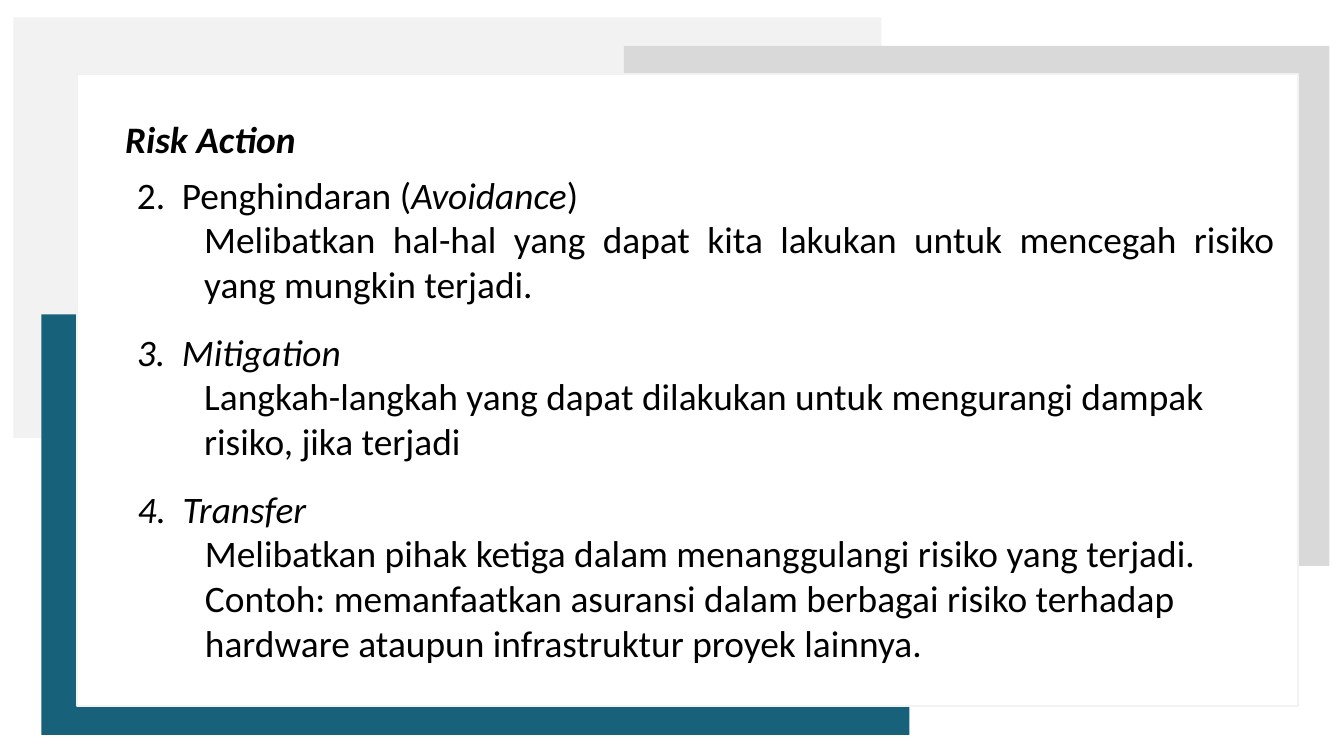
from lxml import etree
from pptx import Presentation
from pptx.dml.color import RGBColor
from pptx.enum import shapes, text
from pptx.oxml.ns import qn
from pptx.util import Pt

HUES = {"pale": "F2F2F2", "gray": "D9D9D9", "teal": "17617B",
        "white": "FFFFFF", "ink": "000000"}
PANELS = [
    ("pale", None, (7.2, 9.3, 465, 225.3)),
    ("gray", None, (334.2, 24.6, 378, 278.6)),
    ("teal", None, (22.2, 168.4, 465, 225.3)),
    ("white", "pale", (41.2, 39.8, 654.3, 338.4)),
]
TITLE = "Risk Action"
FIRST = 2
ACTIONS = [
    ([("Penghindaran (", False), ("Avoidance", True), (")", False)],
     "Melibatkan hal-hal yang dapat kita lakukan untuk mencegah risiko "
     "yang mungkin terjadi.",
     "JUSTIFY", (66.2, 88.4, 624.2, 80)),
    ([("Mitigation", True)],
     "Langkah-langkah yang dapat dilakukan untuk mengurangi dampak risiko, "
     "jika terjadi",
     "LEFT", (66.2, 172.5, 630, 80)),
    ([("Transfer", True)],
     "Melibatkan pihak ketiga dalam menanggulangi risiko yang terjadi. "
     "Contoh: memanfaatkan asuransi dalam berbagai risiko terhadap hardware "
     "ataupun infrastruktur proyek lainnya.",
     "LEFT", (66.6, 256.6, 623.5, 104.4)),
]
FONT = {"name": "Calibri", "size": Pt(20), "bold": False}
FRAME = {"word_wrap": True, "vertical_anchor": text.MSO_ANCHOR.TOP,
         "auto_size": text.MSO_AUTO_SIZE.SHAPE_TO_FIT_TEXT}


def apply(item, vals):
    for key, val in vals.items():
        setattr(item, key, val)


def color(name):
    return RGBColor.from_string(HUES[name])


def place(shape, box):
    apply(shape, dict(zip(("left", "top", "width", "height"), map(Pt, box))))


def write(para, runs, align, space=1.0, **style):
    apply(para, {"alignment": text.PP_ALIGN[align], "line_spacing": space,
                 "space_before": Pt(0)})
    for words, slant in runs:
        run = para.add_run()
        run.text = words
        apply(run.font, {**FONT, "italic": slant, **style})
        run.font.color.rgb = color("ink")


def indent(para, left, hang, kind, **vals):
    props = para._p.get_or_add_pPr()
    props.set("marL", str(Pt(left)))
    props.set("indent", str(Pt(hang)))
    etree.SubElement(props, qn(kind), vals)


def main():
    deck = Presentation()
    apply(deck, {"slide_width": Pt(720), "slide_height": Pt(405)})
    slide = deck.slides.add_slide(deck.slide_layouts.get_by_name("Comparison"))
    tree = slide.shapes._spTree

    for pos, (fill, line, box) in enumerate(PANELS):
        panel = slide.shapes.add_shape(
            shapes.MSO_SHAPE.RECTANGLE, *map(Pt, box))
        panel.shadow.inherit = False
        panel.fill.solid()
        panel.fill.fore_color.rgb = color(fill)
        if line:
            panel.line.color.rgb = color(line)
            panel.line.width = Pt(1)
        else:
            panel.line.fill.background()
        tree.insert(2 + pos, panel._element)

    head = slide.shapes.title
    place(head, (59.8, 46.8, 576, 39))
    apply(head.text_frame, FRAME)
    write(head.text_frame.paragraphs[0], [(TITLE, True)], "JUSTIFY", 1.5,
          bold=True)

    bodies = [p for p in slide.placeholders if p.placeholder_format.idx > 0]
    for num, (body, (name, note, align, box)) in enumerate(
            zip(bodies, ACTIONS), FIRST):
        place(body, box)
        frame = body.text_frame
        apply(frame, FRAME)
        write(frame.paragraphs[0], name, align)
        indent(frame.paragraphs[0], 24, -24, "a:buAutoNum",
               type="arabicPeriod", startAt=str(num))
        para = frame.add_paragraph()
        write(para, [(note, False)], align)
        indent(para, 36, 0, "a:buNone")
    for spare in bodies[len(ACTIONS):]:
        tree.remove(spare._element)

    deck.save("out.pptx")


if __name__ == "__main__":
    main()
